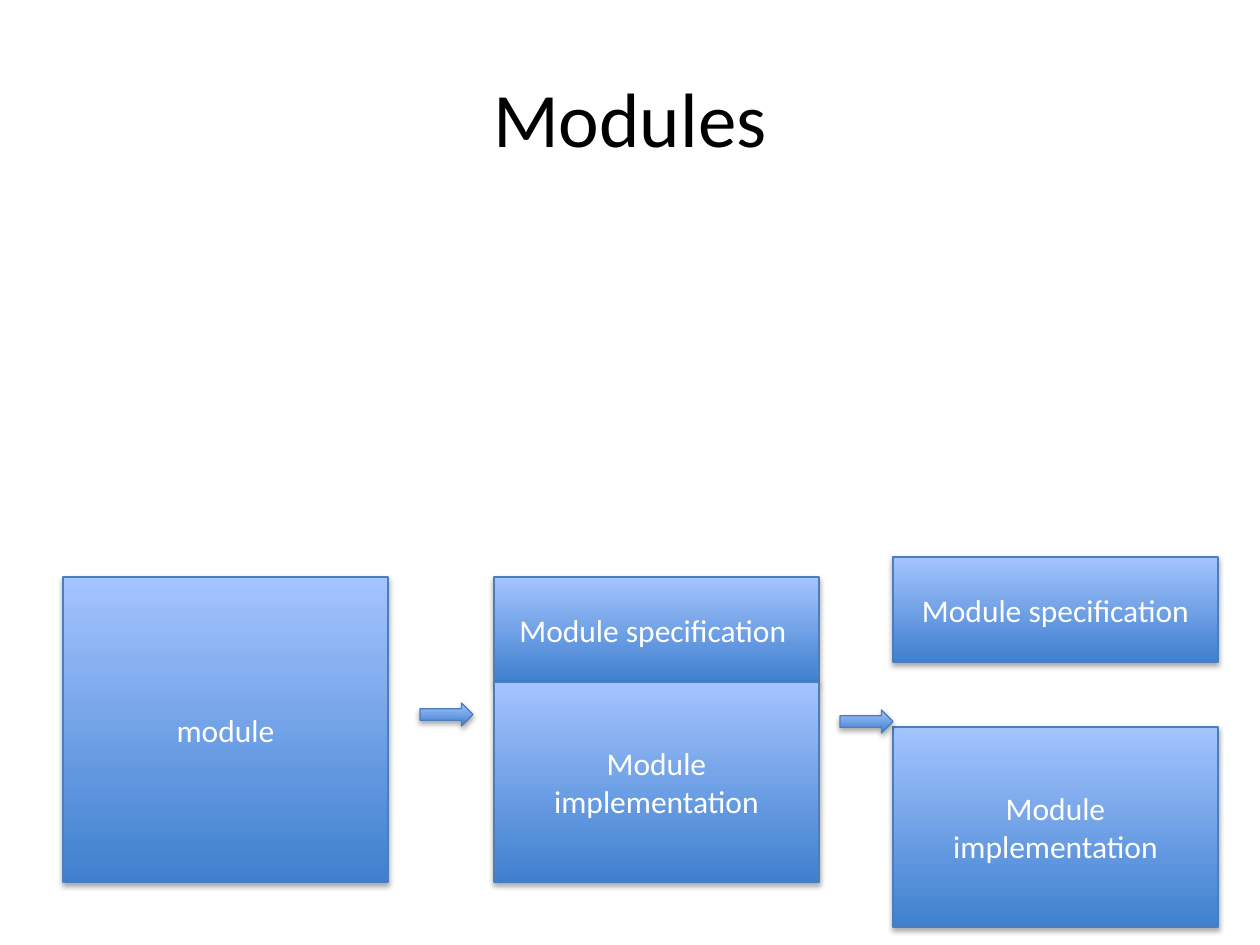
"""Build a slide that splits a module into specification and implementation."""
import pptx
import pptx.dml.color
import pptx.enum.shapes
import pptx.enum.text
import pptx.oxml
import pptx.oxml.ns
import pptx.util

TITLE = "Modules"
SPEC, IMPL = "Module specification", "Module implementation"
WIDE, WHOLE, HEAD, BODY = 325, 305, 105, 200
STACKS = [
    (63, [("module", 577, WHOLE)]),
    (494, [(SPEC + " ", 577, HEAD), (IMPL, 577 + HEAD, BODY)]),
    (893, [(SPEC, 557, HEAD), (IMPL, 727, BODY)]),
]
ARROWS = [(420, 703), (840, 710)]
ARROW = (53, 23)
THEME = {
    "font": "Calibri", "title": 44, "text": 18, "line": 0.75,
    "ink": "000000", "white": "FFFFFF", "edge": "4B7EBC",
    "fade": ("3F80CE", "A4C4FF"),
}
SHADE = (
    f'<a:effectLst {pptx.oxml.ns.nsdecls("a")}>'
    '<a:outerShdw blurRad="40000" dist="23000" dir="5400000" rotWithShape="0">'
    '<a:srgbClr val="000000"><a:alpha val="35000"/></a:srgbClr>'
    '</a:outerShdw></a:effectLst>'
)
KIND = pptx.enum.shapes.MSO_SHAPE
ALIGN = pptx.enum.text.PP_ALIGN.CENTER
MIDDLE = pptx.enum.text.MSO_ANCHOR.MIDDLE


def px(*vals):
    return [round(val * 914400 / 126) for val in vals]


def rgb(name):
    return pptx.dml.color.RGBColor.from_string(name)


def put(item, vals):
    for key, val in vals.items():
        setattr(item, key, val)


def write(shape, text, size, color):
    frame = shape.text_frame
    put(frame, {"text": text, "word_wrap": True, "vertical_anchor": MIDDLE})
    para = frame.paragraphs[0]
    para.alignment = ALIGN
    font = para.runs[0].font
    put(font, {"name": THEME["font"], "size": pptx.util.Pt(size)})
    font.color.rgb = rgb(color)


def draw(shapes, kind, *place):
    shape = shapes.add_shape(kind, *px(*place))
    shape.fill.gradient()
    shape.fill.gradient_angle = 90
    for stop, color, pos in zip(shape.fill.gradient_stops, THEME["fade"], (0, 1)):
        stop.color.rgb = rgb(color)
        stop.position = pos
    shape.line.color.rgb = rgb(THEME["edge"])
    shape.line.width = pptx.util.Pt(THEME["line"])
    shape._element.spPr.append(pptx.oxml.parse_xml(SHADE))
    return shape


def main():
    deck = pptx.Presentation()
    put(deck, dict(zip(("slide_width", "slide_height"), px(1260, 945))))
    slide = deck.slides.add_slide(deck.slide_layouts[5])
    title = slide.shapes.title
    put(title, dict(zip(("left", "top", "width", "height"), px(63, 38, 1134, 157))))
    write(title, TITLE, THEME["title"], THEME["ink"])
    for left, parts in STACKS:
        group = len(parts) > 1
        shapes = slide.shapes.add_group_shape().shapes if group else slide.shapes
        for text, top, high in parts:
            box = draw(shapes, KIND.RECTANGLE, left, top, WIDE, high)
            write(box, text, THEME["text"], THEME["white"])
    for spot in ARROWS:
        draw(slide.shapes, KIND.RIGHT_ARROW, *spot, *ARROW)
    deck.save("out.pptx")


if __name__ == "__main__":
    main()
